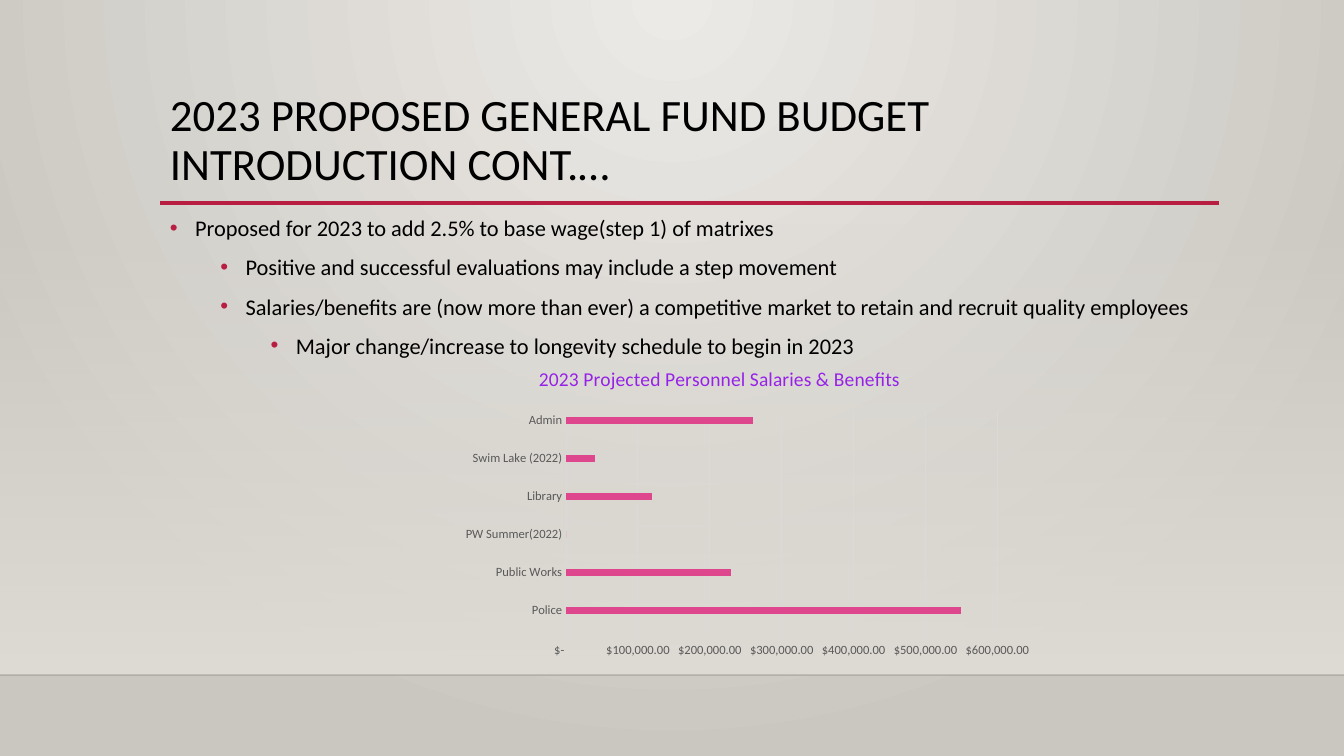
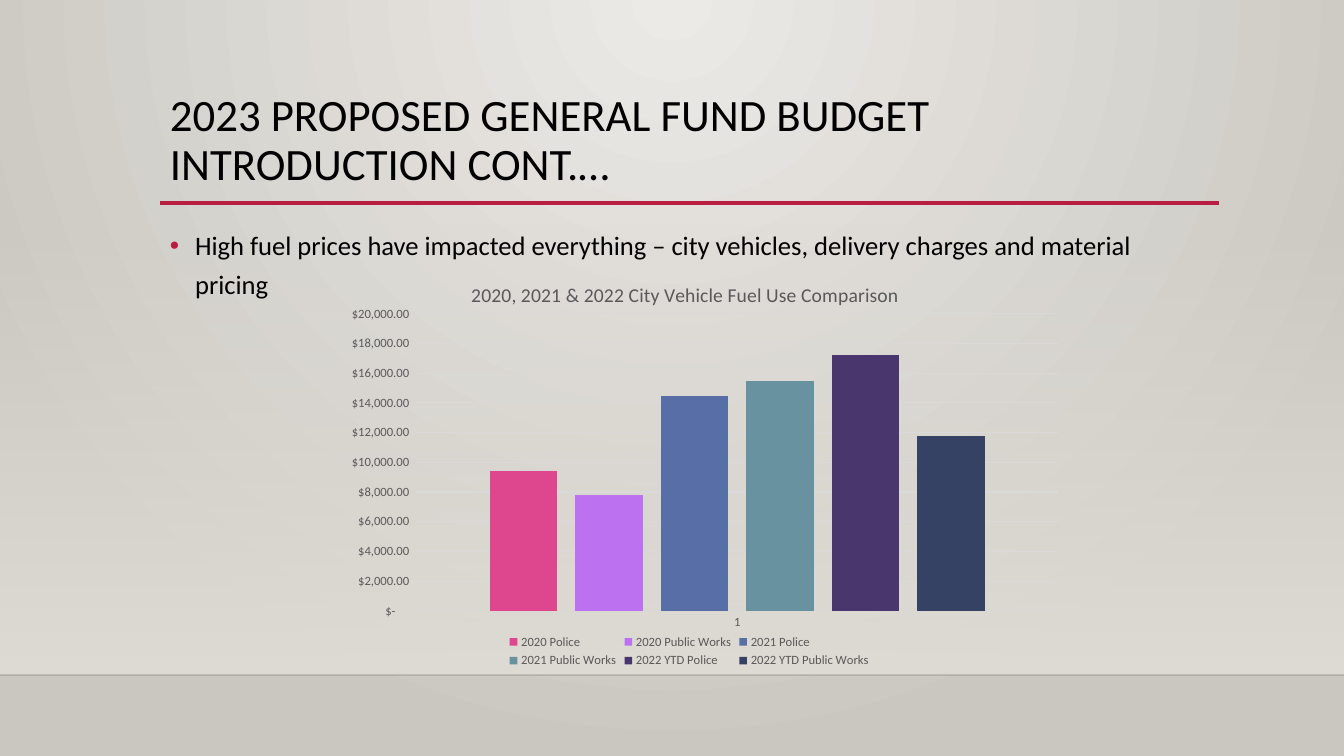
from lxml import etree
from pptx import Presentation
from pptx import util as u
from pptx.chart import data as chart_data
from pptx.dml.color import RGBColor
from pptx.enum import chart as charts, shapes, text
from pptx.oxml import ns

SCALE = 914400 / 100.8
FONT = "Calibri"
COLORS = {
    "glow": "ECEAE7", "edge": "CAC7C1", "band": "DFDBD5", "shelf": "000001",
    "accent": "B71E42", "text": "000000", "muted": "595959", "grid": "D9D9D9",
    "violet": "9622E7", "pink": "DE478E", "lilac": "BC72F0", "blue": "586EA6",
    "teal": "6892A0", "purple": "48366C", "navy": "354264",
}
CURRENCY = '_("$"* #,##0.00_);_("$"* \\(#,##0.00\\);_("$"* "-"??_);_(@_)'

SLIDE_BOX = (0, 0, 1344, 756)
BAND_BOX = (0, 223, 1344, 452)
TITLE_BOX = (160, 88, 1059, 115)
TITLE = "2023 PROPOSED GENERAL FUND BUDGET INTRODUCTION CONT.…"

PERSONNEL_BULLETS = [
    (0, "Proposed for 2023 to add 2.5% to base wage(step 1) of matrixes"),
    (1, "Positive and successful evaluations may include a step movement"),
    (1, "Salaries/benefits are (now more than ever) a competitive market "
        "to retain and recruit quality employees"),
    (2, "Major change/increase to longevity schedule to begin in 2023"),
]
FUEL_BULLETS = [
    (0, "High fuel prices have impacted everything – city vehicles, "
        "delivery charges and material pricing"),
]
PERSONNEL_COSTS = {
    "Police": 550000, "Public Works": 230000, "PW Summer(2022)": 0,
    "Library": 120000, "Swim Lake (2022)": 40000, "Admin": 260000,
}
FUEL_COSTS = [
    ("2020 Police", 9400, "pink"), ("2020 Public Works", 7800, "lilac"),
    ("2021 Police", 14500, "blue"), ("2021 Public Works", 15500, "teal"),
    ("2022 YTD Police", 17200, "purple"), ("2022 YTD Public Works", 11800, "navy"),
]


def px(length):
    return u.Emu(round(length * SCALE))


def place(box):
    return [px(length) for length in box]


def color(name):
    return RGBColor.from_string(COLORS[name])


def apply(target, formats):
    for name, value in formats.items():
        setattr(target, name, value)


def style_font(font, size, color_name):
    apply(font, {"name": FONT, "size": u.Pt(size), "bold": False})
    font.color.rgb = color(color_name)


def add_element(parent, tag, **attributes):
    element = etree.SubElement(parent, ns.qn(tag))
    for name, value in attributes.items():
        element.set(name, str(value))
    return element


def set_alpha(color_parent, percent):
    for rgb in color_parent.iter(ns.qn("a:srgbClr")):
        add_element(rgb, "a:alpha", val=percent * 1000)


def set_gradient(fill, color_names):
    fill.gradient()
    for stop, position, name in zip(fill.gradient_stops, (0, 1), color_names):
        stop.position = position
        stop.color.rgb = color(name)


def set_background(master):
    """Give every slide a round glow from the top centre."""
    set_gradient(master.background.fill, ("glow", "edge"))
    gradient = next(master.element.cSld.iter(ns.qn("a:gradFill")))
    for linear in gradient.findall(ns.qn("a:lin")):
        gradient.remove(linear)
    glow = add_element(gradient, "a:path")
    glow.set("path", "circle")
    add_element(glow, "a:fillToRect", l=43000, t=0, r=43000, b=100000)


def add_line(slide, left, right, y, color_name, width, alpha=100):
    line = slide.shapes.add_connector(
        shapes.MSO_CONNECTOR.STRAIGHT, px(left), px(y), px(right), px(y))
    line.line.color.rgb = color(color_name)
    line.line.width = u.Pt(width)
    properties = line._element.spPr
    if alpha < 100:
        set_alpha(properties, alpha)
    add_element(properties, "a:effectLst")


def add_band(slide, box):
    """Fading band that ends on a thin shelf line."""
    left, top, width, height = box
    band = slide.shapes.add_shape(shapes.MSO_SHAPE.RECTANGLE, *place(box))
    band.shadow.inherit = False
    band.line.fill.background()
    set_gradient(band.fill, ("band", "band"))
    band.fill.gradient_angle = 270
    set_alpha(next(band._element.iter(ns.qn("a:gs"))), 0)
    add_line(slide, left, left + width, top + height, "shelf", 1, alpha=20)


def add_text_frame(slide, box):
    frame = slide.shapes.add_textbox(*place(box)).text_frame
    apply(frame, {"word_wrap": True, "vertical_anchor": text.MSO_ANCHOR.TOP})
    return frame


def add_title(slide, box):
    """Title with the accent rule along the foot of its box."""
    left, top, width, height = box
    paragraph = add_text_frame(slide, box).paragraphs[0]
    paragraph.line_spacing = 0.9
    run = paragraph.add_run()
    run.text = TITLE
    style_font(run.font, 32, "text")
    add_line(slide, left, left + width, top + height, "accent", 2.5)


def add_bullets(slide, box, bullets, size):
    frame = add_text_frame(slide, box)
    for index, (level, wording) in enumerate(bullets):
        paragraph = frame.paragraphs[0] if index == 0 else frame.add_paragraph()
        properties = paragraph._p.get_or_add_pPr()
        properties.set("marL", str(u.Inches(0.25 + 0.5 * level)))
        properties.set("indent", str(-u.Inches(0.25)))
        bullet_color = add_element(properties, "a:buClr")
        add_element(bullet_color, "a:srgbClr", val=COLORS["accent"])
        add_element(properties, "a:buFont", typeface="Arial")
        add_element(properties, "a:buChar", char="•")
        apply(paragraph, {"level": level, "line_spacing": 1.2})
        if index:
            paragraph.space_before = u.Pt(5)
        run = paragraph.add_run()
        run.text = wording
        style_font(run.font, size, "text")


def set_layout(parent, index, **values):
    """Place a chart part by fractions of the chart's size."""
    for layout in parent.findall(ns.qn("c:layout")):
        parent.remove(layout)
    layout = etree.Element(ns.qn("c:layout"))
    parent.insert(index, layout)
    manual = add_element(layout, "c:manualLayout")
    for name, value in values.items():
        add_element(manual, f"c:{name}", val=value)


def style_axes(chart, maximum, unit):
    for axis in (chart.category_axis, chart.value_axis):
        apply(axis, {"major_tick_mark": charts.XL_TICK_MARK.NONE,
                     "minor_tick_mark": charts.XL_TICK_MARK.NONE})
        style_font(axis.tick_labels.font, 9, "muted")
    values = chart.value_axis
    apply(values, {"minimum_scale": 0, "maximum_scale": maximum, "major_unit": unit,
                   "has_major_gridlines": True})
    apply(values.tick_labels, {"number_format": CURRENCY,
                               "number_format_is_linked": False})
    values.format.line.fill.background()
    for line in (chart.category_axis.format.line, values.major_gridlines.format.line):
        line.color.rgb = color("grid")
        line.width = u.Pt(0.75)


def add_bar_chart(slide, box, kind, categories, series, title, title_color,
                  plot_area, scale, bars):
    """Bar chart; series holds (name, values, colour) and scale (maximum, unit)."""
    data = chart_data.CategoryChartData()
    data.categories = categories
    for name, values, _ in series:
        data.add_series(name, values)
    chart = slide.shapes.add_chart(kind, *place(box), data).chart
    style_font(chart.font, 10, "text")
    apply(chart, {"has_title": True, "has_legend": len(series) > 1})

    frame = chart.chart_title.text_frame
    frame.text = title
    style_font(frame.paragraphs[0].runs[0].font, 14, title_color)
    chart.chart_title.include_in_layout = False
    set_layout(chart.chart_title._element, 1,
               xMode="edge", yMode="edge", x=0.2, y=0.03)

    left, top, width, height = plot_area
    set_layout(chart._chartSpace.chart.plotArea, 0, layoutTarget="inner",
               xMode="edge", yMode="edge", x=left, y=top, w=width, h=height)
    plot = chart.plots[0]
    apply(plot, {"vary_by_categories": False, **bars})
    for drawn, (_, _, color_name) in zip(plot.series, series):
        drawn.invert_if_negative = False
        drawn.format.fill.solid()
        drawn.format.fill.fore_color.rgb = color(color_name)
    style_axes(chart, *scale)
    if chart.has_legend:
        apply(chart.legend, {"position": charts.XL_LEGEND_POSITION.BOTTOM,
                             "include_in_layout": False})
        style_font(chart.legend.font, 9, "muted")


def add_base_slide(presentation):
    slide = presentation.slides.add_slide(presentation.slide_layouts[6])
    add_band(slide, BAND_BOX)
    add_title(slide, TITLE_BOX)
    return slide


def add_personnel_slide(presentation):
    slide = add_base_slide(presentation)
    add_bullets(slide, (160, 204, 1059, 470), PERSONNEL_BULLETS, 16)
    categories, values = [], []
    for name, cost in PERSONNEL_COSTS.items():
        categories += ["", name]
        values += [None, cost]
    add_bar_chart(
        slide, (412, 352, 620, 312), charts.XL_CHART_TYPE.BAR_CLUSTERED,
        categories, [("Series 1", values, "pink")],
        "2023 Projected Personnel Salaries & Benefits", "violet",
        (0.25, 0.19, 0.7, 0.73), (600000, 100000), {"gap_width": 182})


def add_fuel_slide(presentation):
    slide = add_base_slide(presentation)
    add_bullets(slide, (160, 218, 1059, 456), FUEL_BULLETS, 19)
    add_bar_chart(
        slide, (320, 265, 739, 407), charts.XL_CHART_TYPE.COLUMN_CLUSTERED,
        ["1"], [(name, [cost], shade) for name, cost, shade in FUEL_COSTS],
        "2020, 2021 & 2022 City Vehicle Fuel Use Comparison", "muted",
        (0.13, 0.12, 0.87, 0.73), (20000, 2000), {"gap_width": 219, "overlap": -27})


def main():
    presentation = Presentation()
    _, _, width, height = place(SLIDE_BOX)
    apply(presentation, {"slide_width": width, "slide_height": height})
    set_background(presentation.slide_master)
    add_personnel_slide(presentation)
    add_fuel_slide(presentation)
    presentation.save("out.pptx")


if __name__ == "__main__":
    main()
